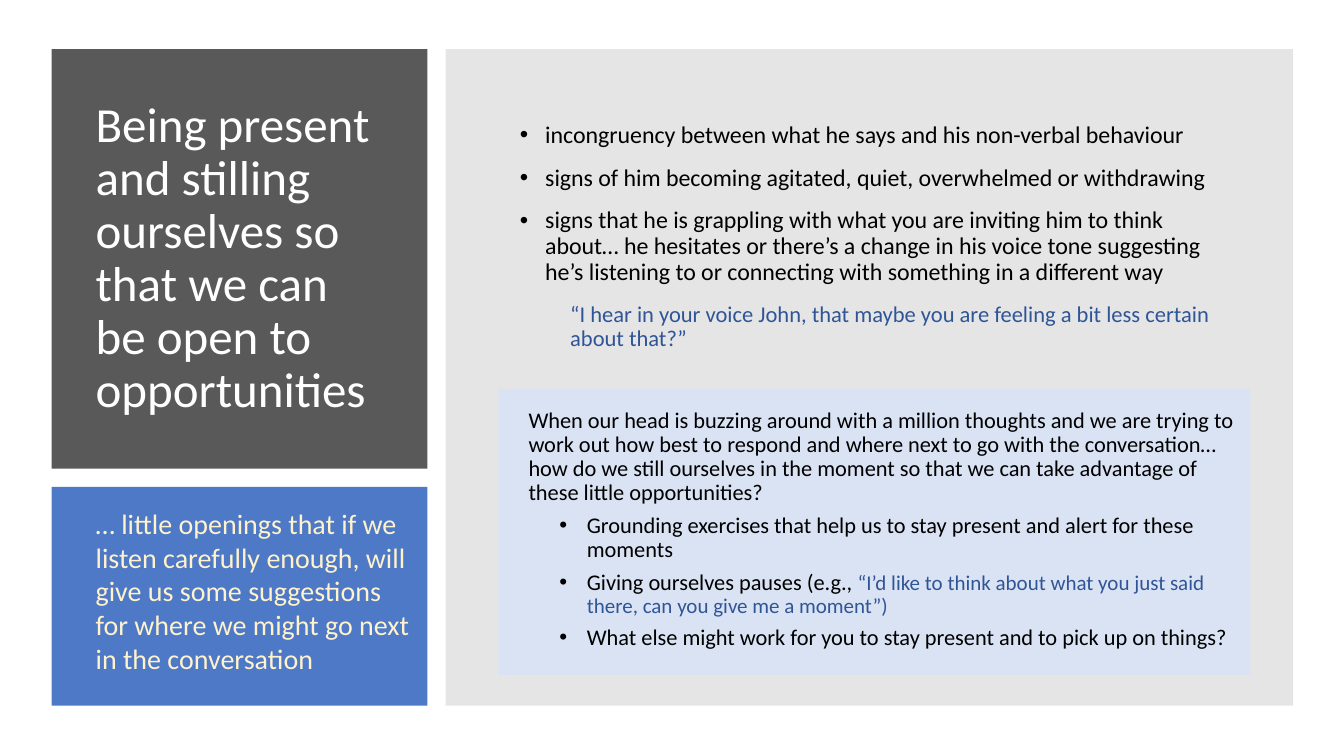
import pptx
import pptx.util
import pptx.dml.color
import pptx.enum.shapes
import pptx.enum.text
import pptx.oxml.ns
from lxml import etree

Cm = pptx.util.Cm
Pt = pptx.util.Pt
COLOURS = {
    "charcoal": "595959",
    "blue": "4472C4",
    "grey": "808080",
    "pale blue": "DAE3F3",
    "quote": "2F5597",
    "cream": "FFF2CC",
    "white": "FFFFFF",
    "black": "000000",
}


def add_panel(left, top, width, height, colour, opacity=100):
    panel = page.shapes.add_shape(
        pptx.enum.shapes.MSO_SHAPE.RECTANGLE, Cm(left), Cm(top), Cm(width), Cm(height))
    panel.shadow.inherit = False
    panel.line.fill.background()
    panel.fill.solid()
    panel.fill.fore_color.rgb = pptx.dml.color.RGBColor.from_string(COLOURS[colour])
    if opacity < 100:
        tint = panel.element.find(".//" + pptx.oxml.ns.qn("a:srgbClr"))
        etree.SubElement(tint, pptx.oxml.ns.qn("a:alpha"), val=str(opacity * 1000))
    return panel


def write(box, paragraphs, line_spacing=0.9, top_inset=0.13):
    frame = box.text_frame
    frame.word_wrap = True
    frame.auto_size = pptx.enum.text.MSO_AUTO_SIZE.NONE
    frame.vertical_anchor = pptx.enum.text.MSO_ANCHOR.TOP
    frame.margin_left = frame.margin_right = Cm(0.25)
    frame.margin_top, frame.margin_bottom = Cm(top_inset), Cm(0.13)
    for number, (margin, hanging, after, spans) in enumerate(paragraphs):
        para = frame.add_paragraph() if number else frame.paragraphs[0]
        para.alignment = pptx.enum.text.PP_ALIGN.LEFT
        para.line_spacing = line_spacing
        para.space_before, para.space_after = Pt(0), Pt(after)
        properties = para._p.get_or_add_pPr()
        properties.set("marL", str(Cm(margin)))
        properties.set("indent", str(-Cm(hanging)))
        if hanging:
            etree.SubElement(properties, pptx.oxml.ns.qn("a:buFont"), typeface="Arial")
            etree.SubElement(properties, pptx.oxml.ns.qn("a:buChar"), char="•")
        for text, size, colour in spans:
            span = para.add_run()
            span.text = text
            span.font.name = "Calibri"
            span.font.size = Pt(size)
            span.font.color.rgb = pptx.dml.color.RGBColor.from_string(COLOURS[colour])


deck = pptx.Presentation()
deck.slide_width, deck.slide_height = Cm(33.87), Cm(19.05)
page = deck.slides.add_slide(deck.slide_layouts[5])

title = page.shapes.title
title_panel = add_panel(1.3, 1.24, 9.47, 10.57, "charcoal")
title.element.addprevious(title_panel.element)
title.left, title.top, title.width, title.height = Cm(2.16), Cm(2.03), Cm(7.9), Cm(8.99)
write(title, [(0, 0, 0, [
    ("Being present and stilling ourselves so that we can be open to opportunities", 35, "white")])])
title.text_frame.vertical_anchor = pptx.enum.text.MSO_ANCHOR.MIDDLE

add_panel(1.3, 12.27, 9.47, 5.51, "blue", 95)
add_panel(11.23, 1.24, 21.36, 16.54, "grey", 20)

signs = page.shapes.add_textbox(Cm(12.85), Cm(1.8), Cm(18.39), Cm(8.99))
sign_texts = [
    "incongruency between what he says and his non-verbal behaviour",
    "signs of him becoming agitated, quiet, overwhelmed or withdrawing",
    "signs that he is grappling with what you are inviting him to think about… he hesitates or "
    "there’s a change in his voice tone suggesting he’s listening to or connecting with something "
    "in a different way",
]
sign_paragraphs = [(0.64, 0.64, 12, [(text, 17.1, "black")]) for text in sign_texts]
sign_paragraphs.append((1.27, 0, 12, [
    ("“I hear in your voice John, that maybe you are feeling a bit less certain about that?”",
     16.1, "quote")]))
write(signs, sign_paragraphs, top_inset=1.3)

openings = page.shapes.add_textbox(Cm(2.16), Cm(12.64), Cm(8.5), Cm(4.52))
write(openings, [(0, 0, 0, [
    ("… little openings that if we listen carefully enough, will give us some suggestions for "
     "where we might go next in the conversation", 20, "cream")])], line_spacing=1.0)

grounding = add_panel(12.56, 9.8, 18.95, 7.21, "pale blue")
grounding_bullets = [
    [("Grounding exercises that help us to stay present and alert for these moments", 16, "black")],
    [("Giving ourselves pauses (e.g., ", 16, "black"),
     ("“I’d like to think about what you just said there, can you give me a moment”)", 15, "quote")],
    [("What else might work for you to stay present and to pick up on things?", 16, "black")],
]
grounding_paragraphs = [(0.51, 0, 6, [
    ("When our head is buzzing around with a million thoughts and we are trying to work out how "
     "best to respond and where next to go with the conversation… how do we still ourselves in "
     "the moment so that we can take advantage of these little opportunities?", 16, "black")])]
grounding_paragraphs += [(1.98, 0.69, 6, spans) for spans in grounding_bullets]
write(grounding, grounding_paragraphs, top_inset=0.51)

deck.save("out.pptx")
